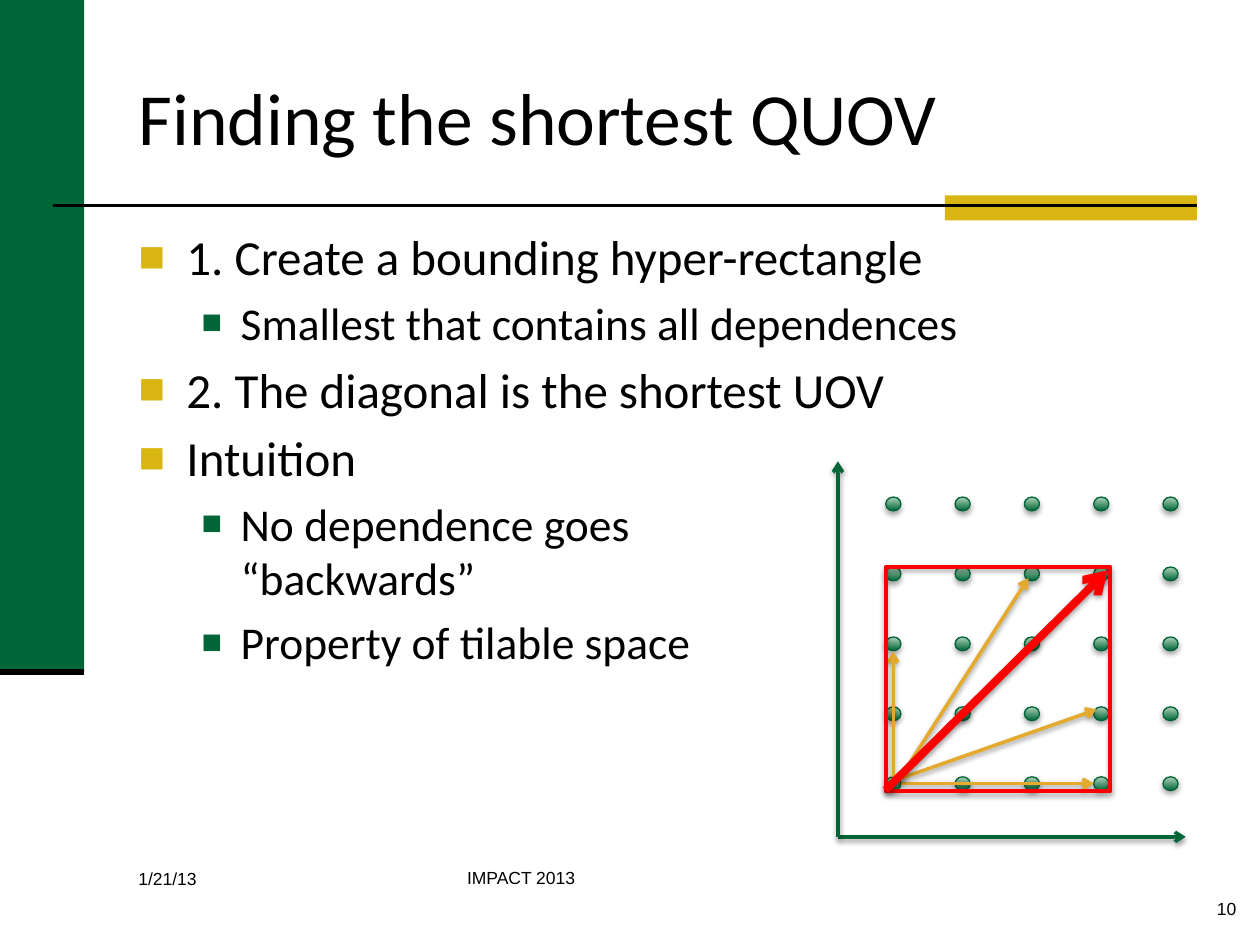
from dataclasses import dataclass

import lxml.etree
import pptx
import pptx.dml.color
import pptx.enum.shapes
import pptx.enum.text
import pptx.oxml.ns
import pptx.util

SHAPE = pptx.enum.shapes.MSO_SHAPE
ALIGN = pptx.enum.text.PP_ALIGN
ANCHOR = pptx.enum.text.MSO_ANCHOR
UNIT = pptx.util.Inches(0.25)  # the slide is a grid of 40 columns by 30 rows


@dataclass(frozen=True)
class Theme:
    green: str = "006638"
    light_green: str = "B1D2B9"
    dot_edge: str = "006437"
    gold: str = "D8B511"
    amber: str = "E4AA2E"
    red: str = "FF0000"
    black: str = "000000"
    font: str = "Calibri"
    footer_font: str = "Arial"
    title_size: int = 42
    body_sizes: tuple = (28, 26)
    footer_size: int = 10


@dataclass(frozen=True)
class Box:
    """An area in grid columns and rows."""
    left: float
    top: float
    width: float
    height: float

    def point(self, across, down):
        return self.left + across * self.width, self.top + down * self.height

    def lengths(self):
        return [round(value * UNIT) for value in (self.left, self.top, self.width, self.height)]


THEME = Theme()
BULLETS = (  # left margin and hanging indent in inches, colour, size in percent
    (0.38, 0.38, THEME.gold, 90),
    (0.81, 0.31, THEME.green, 75),
)
POINTS = (
    (0, "1. Create a bounding hyper-rectangle"),
    (1, "Smallest that contains all dependences"),
    (0, "2. The diagonal is the shortest UOV"),
    (0, "Intuition"),
    (1, "No dependence goes\v“backwards”"),
    (1, "Property of tilable space"),
)
FOOTERS = (
    ("1/21/13", Box(4, 27.36, 8.68, 2), ALIGN.LEFT),
    ("IMPACT 2013", Box(10.04, 27.32, 13, 2), ALIGN.CENTER),
    ("10", Box(31.32, 28.32, 8.32, 1), ALIGN.RIGHT),
)
# Lattice coordinates: (column, row) counted from the lower left dot
AXES = (((-0.8, -0.76), (4.22, -0.76)), ((-0.8, -0.76), (-0.8, 4.61)))
DEPENDENCES = (
    ((0.11, 0), (2.89, 0)),
    ((0, 0.09), (0, 1.89)),
    ((0.09, 0.07), (1.95, 2.94)),
    ((0.09, 0.07), (2.93, 1.06)),
)
DIAGONAL = ((-0.11, -0.09), (3.09, 3.05))
BOUNDS = ((-0.11, -0.11), (3.13, 3.1))


def rgb(colour):
    return pptx.dml.color.RGBColor.from_string(colour)


def add_element(parent, tag, **attributes):
    element = lxml.etree.SubElement(parent, pptx.oxml.ns.qn(tag))
    for name, value in attributes.items():
        element.set(name, str(value))
    return element


def set_effects(shape, distance=None, opacity=35):
    """Give the shape a soft downward shadow, or none without a distance."""
    effects = add_element(shape.element.spPr, "a:effectLst")
    if distance:
        shadow = add_element(effects, "a:outerShdw", blurRad=pptx.util.Pt(3.1),
                             dist=pptx.util.Pt(distance), dir=5400000, rotWithShape=0)
        colour = add_element(shadow, "a:srgbClr", val=THEME.black)
        add_element(colour, "a:alpha", val=opacity * 1000)


def write(paragraph, text, *, size, font=THEME.font, colour=THEME.black, align=ALIGN.LEFT):
    paragraph.text = text
    paragraph.alignment = align
    for run in paragraph.runs:
        run.font.size = pptx.util.Pt(size)
        run.font.name = font
        run.font.color.rgb = rgb(colour)


def add_bullet(paragraph, level):
    margin, hanging, colour, percent = BULLETS[level]
    properties = paragraph._p.get_or_add_pPr()
    properties.set("marL", str(pptx.util.Inches(margin)))
    properties.set("indent", str(-pptx.util.Inches(hanging)))
    add_element(add_element(properties, "a:buClr"), "a:srgbClr", val=colour)
    add_element(properties, "a:buSzPct", val=percent * 1000)
    add_element(properties, "a:buFont", typeface=THEME.footer_font)
    add_element(properties, "a:buChar", char="■")


def add_line(slide, start, end, colour, width, arrow=False):
    ends = [round(value * UNIT) for value in (*start, *end)]
    line = slide.shapes.add_connector(pptx.enum.shapes.MSO_CONNECTOR.STRAIGHT, *ends)
    line.line.color.rgb = rgb(colour)
    line.line.width = pptx.util.Pt(width)
    if arrow:
        outline = line.element.spPr.find(pptx.oxml.ns.qn("a:ln"))
        add_element(outline, "a:tailEnd", type="arrow")
    set_effects(line, 1.6 if arrow else None, 38)


def add_block(slide, box, colour):
    block = slide.shapes.add_shape(SHAPE.RECTANGLE, *box.lengths())
    block.fill.solid()
    block.fill.fore_color.rgb = rgb(colour)
    block.line.fill.background()
    set_effects(block)


def add_decoration(slide, side, rule):
    """Draw the side band and the ruled bar under the title."""
    add_block(slide, side, THEME.green)
    add_line(slide, side.point(0, 1), side.point(1, 1), THEME.black, 3.5)
    add_block(slide, Box(rule.left + rule.width - 8, rule.top, 8, rule.height), THEME.gold)
    add_line(slide, rule.point(0, 0.4), rule.point(1, 0.4), THEME.black, 1.5)


def place(placeholder, box, anchor):
    placeholder.left, placeholder.top, placeholder.width, placeholder.height = box.lengths()
    frame = placeholder.text_frame
    frame.word_wrap = True
    frame.auto_size = pptx.enum.text.MSO_AUTO_SIZE.NONE
    frame.vertical_anchor = anchor
    return frame


def fill_title(slide, box):
    frame = place(slide.shapes.title, box, ANCHOR.MIDDLE)
    write(frame.paragraphs[0], "Finding the shortest QUOV", size=THEME.title_size)


def fill_body(slide, box):
    frame = place(slide.placeholders[1], box, ANCHOR.TOP)
    for index, (level, text) in enumerate(POINTS):
        paragraph = frame.add_paragraph() if index else frame.paragraphs[0]
        size = THEME.body_sizes[level]
        write(paragraph, text, size=size)
        paragraph.level = level
        paragraph.space_before = pptx.util.Pt(0.2 * size if index else 0)
        add_bullet(paragraph, level)


def add_footers(slide):
    for text, box, align in FOOTERS:
        frame = slide.shapes.add_textbox(*box.lengths()).text_frame
        frame.word_wrap = True
        write(frame.paragraphs[0], text, size=THEME.footer_size,
              font=THEME.footer_font, align=align)


def add_dot(slide, centre):
    width, height = 0.48, 0.44
    box = Box(centre[0] - width / 2, centre[1] - height / 2, width, height)
    dot = slide.shapes.add_shape(SHAPE.OVAL, *box.lengths())
    dot.fill.gradient()
    dot.fill.gradient_angle = 90
    for stop, colour in zip(dot.fill.gradient_stops, (THEME.green, THEME.light_green)):
        stop.color.rgb = rgb(colour)
    dot.line.color.rgb = rgb(THEME.dot_edge)
    dot.line.width = pptx.util.Pt(0.75)
    set_effects(dot, 1.8)


def add_lattice(slide, box, count=5):
    """Draw dots, axes, dependences and bounds; the box spans the outer dot centres."""
    def at(position):
        column, row = position
        return box.point(column / (count - 1), 1 - row / (count - 1))

    for column in range(count):
        for row in range(count):
            add_dot(slide, at((column, row)))
    for arrows, colour in ((AXES, THEME.green), (DEPENDENCES, THEME.amber)):
        for start, end in arrows:
            add_line(slide, at(start), at(end), colour, 2, arrow=True)
    (left, bottom), (right, top) = map(at, BOUNDS)
    bounds = slide.shapes.add_shape(
        SHAPE.RECTANGLE, *Box(left, top, right - left, bottom - top).lengths())
    bounds.fill.background()
    bounds.line.color.rgb = rgb(THEME.red)
    bounds.line.width = pptx.util.Pt(2.25)
    set_effects(bounds, 1.8)
    add_line(slide, *map(at, DIAGONAL), THEME.red, 4.5, arrow=True)


def main():
    presentation = pptx.Presentation()
    presentation.slide_width, presentation.slide_height = 40 * UNIT, 30 * UNIT
    slide = presentation.slides.add_slide(presentation.slide_layouts[1])
    add_decoration(slide, Box(0, 0, 2.67, 21.33), Box(1.68, 6.2, 36.32, 0.8))
    fill_title(slide, Box(4, 1.2, 34, 5))
    fill_body(slide, Box(4, 7, 34, 19.8))
    add_footers(slide)
    add_lattice(slide, Box(28.36, 16, 8.8, 8.88))
    presentation.save("out.pptx")


if __name__ == "__main__":
    main()
